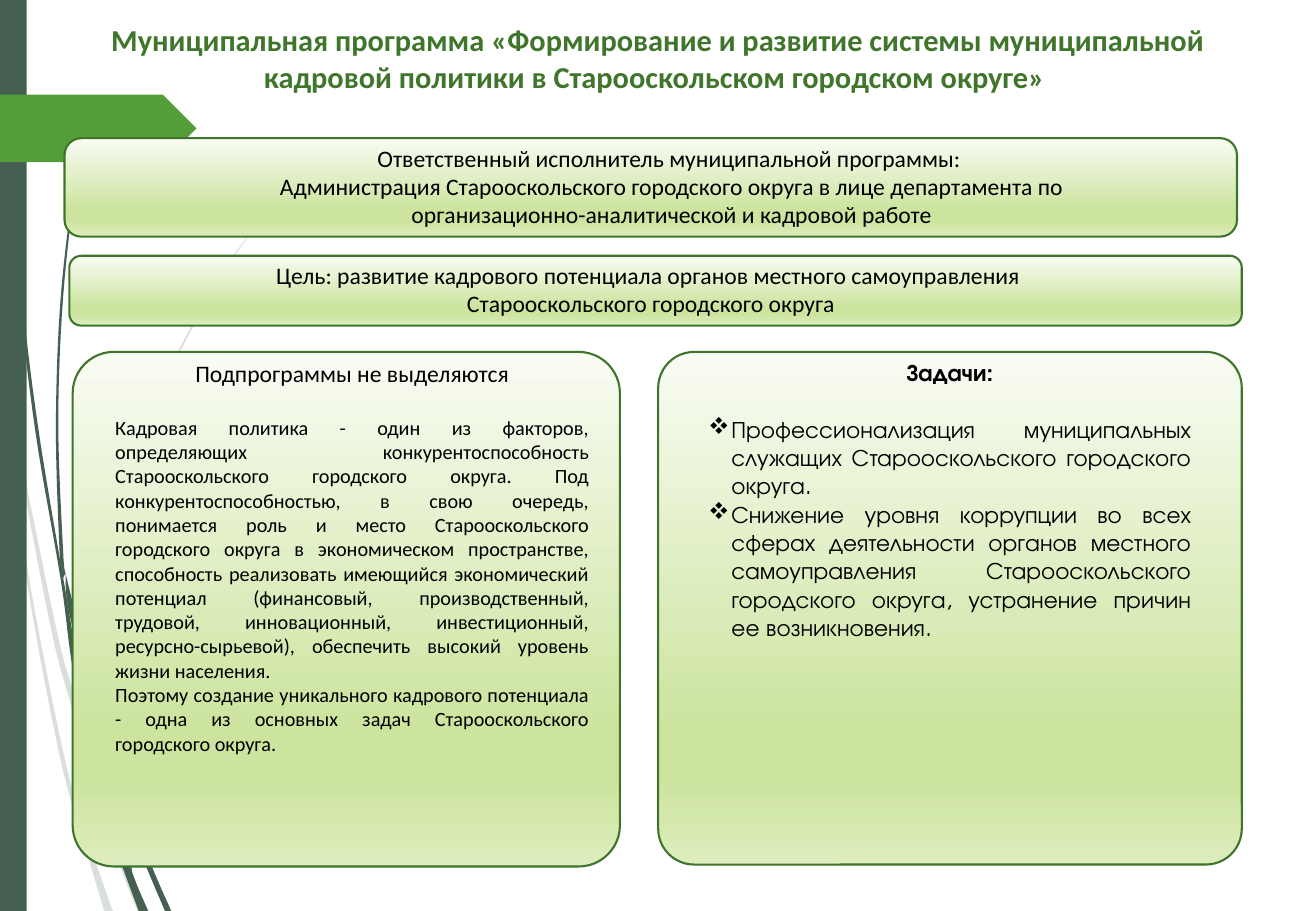
import pptx
import pptx.dml.color
import pptx.enum.shapes
import pptx.enum.text
import pptx.oxml
import pptx.oxml.ns
import pptx.util
from lxml import etree

Cm = pptx.util.Cm
Pt = pptx.util.Pt
RGBColor = pptx.dml.color.RGBColor
Shapes = pptx.enum.shapes.MSO_SHAPE
Align = pptx.enum.text.PP_ALIGN
qn = pptx.oxml.ns.qn

DARK_GREEN = RGBColor(0x45, 0x5F, 0x51)
ARROW_GREEN = RGBColor(0x54, 0x9E, 0x39)
TITLE_GREEN = RGBColor(0x3F, 0x76, 0x2B)
BORDER_GREEN = RGBColor(0x3E, 0x75, 0x2A)
BLACK = RGBColor(0, 0, 0)
PANEL_STOPS = [
    (0, RGBColor(0xF9, 0xFC, 0xF4)),
    (74, RGBColor(0xCC, 0xE4, 0x9E)),
    (83, RGBColor(0xCC, 0xE4, 0x9E)),
    (100, RGBColor(0xDD, 0xED, 0xBE)),
]


def smooth(points, steps=8):
    """Return points on a Catmull-Rom curve through the given points."""
    padded = [points[0], *points, points[-1]]
    curve = []
    for before, start, end, after in zip(padded, padded[1:], padded[2:], padded[3:]):
        for step in range(steps):
            t = step / steps
            curve.append(tuple(
                b + 0.5 * t * (c - a + t * (2 * a - 5 * b + 4 * c - d + t * (3 * (b - c) + d - a)))
                for a, b, c, d in zip(before, start, end, after)))
    return curve + [points[-1]]


def paint(shape, color):
    """Give a shape a plain fill without line or shadow."""
    shape.shadow.inherit = False
    shape.fill.solid()
    shape.fill.fore_color.rgb = color
    shape.line.fill.background()


presentation = pptx.Presentation()
presentation.slide_width = Cm(27.51)
presentation.slide_height = Cm(19.05)
slide = presentation.slides.add_slide(presentation.slide_layouts[6])

# Grass blades: opacity in percent, left edge, right edge (cm)
blades = [
    (20, [(0.2, 8.89), (0.53, 11.94), (1.24, 15.77), (1.75, 17.6), (2.18, 19.05)],
     [(0.33, 9.55), (0.58, 11.91), (1.32, 15.72), (1.78, 17.35), (2.01, 18.06), (2.36, 19.05)]),
    (20, [(0, 7.16), (0.28, 9.02), (1.09, 13.26), (1.6, 15.21), (1.65, 16.41), (2.01, 18.06)],
     [(0, 7.16), (0.28, 8.76), (1.19, 13.21), (1.63, 14.88), (1.73, 16.41), (2.01, 18.06)]),
    (20, [(1.68, 15.49), (2.34, 17.63), (2.87, 19.05)],
     [(1.68, 15.14), (2.44, 17.58), (2.97, 19.05)]),
    (20, [(5.97, 3.89), (5.13, 5), (4.34, 6.2), (3.02, 8.84), (2.06, 11.71), (1.63, 14.83), (1.68, 15.14)],
     [(5.97, 3.91), (5.13, 5.03), (4.37, 6.22), (3.05, 8.86), (2.11, 11.73), (1.68, 14.83), (1.68, 15.14)]),
    (100, [(0.05, 0), (0.15, 2.79), (0.38, 5.92), (0.74, 9.02), (1.27, 12.12), (1.55, 14.15),
           (2.11, 16.74), (2.51, 17.98), (2.9, 19.05)],
     [(0.08, 0), (0.18, 2.77), (0.43, 5.89), (0.81, 9.02), (1.45, 12.83), (1.65, 14.12),
      (2.24, 16.69), (2.77, 18.26), (3.1, 19.05)]),
    (100, [(1.37, 11.99), (1.45, 12.83), (2.01, 15.04), (2.41, 16.38), (2.51, 17.55), (2.77, 18.26)],
     [(1.37, 11.99), (2.11, 14.99), (2.41, 16.03), (2.51, 16.66), (2.77, 18.26)]),
    (100, [(2.51, 16.66), (3, 17.98), (3.45, 19.05)],
     [(2.51, 16.28), (3.1, 17.93), (3.58, 19.05)]),
    (100, [(1.57, 3.58), (1.27, 6.22), (1.17, 8.86), (1.24, 11.4), (1.3, 12.12)],
     [(1.6, 3.58), (1.32, 6.22), (1.22, 8.86), (1.32, 11.51), (1.37, 11.99)]),
]
for opacity, left_edge, right_edge in blades:
    outline = [(Cm(x), Cm(y)) for x, y in smooth(left_edge) + smooth(right_edge)[::-1]]
    builder = slide.shapes.build_freeform(*outline[0])
    builder.add_line_segments(outline[1:], close=True)
    blade = builder.convert_to_shape()
    paint(blade, DARK_GREEN)
    if opacity < 100:
        color_element = blade._element.spPr.find(qn("a:solidFill"))[0]
        etree.SubElement(color_element, qn("a:alpha"), val=str(opacity * 1000))

side_bar = slide.shapes.add_shape(Shapes.RECTANGLE, 0, 0, Cm(0.56), Cm(19.05))
paint(side_bar, DARK_GREEN)
arrow = slide.shapes.add_shape(Shapes.PENTAGON, 0, Cm(1.98), Cm(4.11), Cm(1.41))
paint(arrow, ARROW_GREEN)

# Panels: left, top, width, height (cm), corner radius
panels = [
    (1.35, 2.89, 24.51, 2.06, 0.17),
    (1.45, 5.35, 24.51, 1.46, 0.17),
    (1.52, 7.36, 11.44, 10.76, 0.08),
    (13.76, 7.36, 12.2, 10.72, 0.07),
]
for *box, radius in panels:
    panel = slide.shapes.add_shape(Shapes.ROUNDED_RECTANGLE, *map(Cm, box))
    panel.shadow.inherit = False
    panel.adjustments[0] = radius
    panel.line.color.rgb = BORDER_GREEN
    panel.line.width = Pt(1.25)
    panel.fill.gradient()
    panel.fill.gradient_angle = 270
    stop_list = panel._element.spPr.find(qn("a:gradFill")).find(qn("a:gsLst"))
    for old_stop in list(stop_list):
        stop_list.remove(old_stop)
    for position, color in PANEL_STOPS:
        stop = etree.SubElement(stop_list, qn("a:gs"), pos=str(position * 1000))
        etree.SubElement(stop, qn("a:srgbClr"), val=str(color))

title_font = {"name": "Calibri", "size": Pt(18), "bold": True}
lead_font = {"name": "Calibri", "size": Pt(14), "bold": False}
body_font = {**lead_font, "size": Pt(12)}
task_font = {**lead_font, "name": "TeX Gyre Adventor"}
task_heading_font = {**task_font, "bold": True}
centered = {"alignment": Align.CENTER}
justified = {"alignment": Align.JUSTIFY}
after_heading = {**justified, "space_before": Pt(16.5)}

# Texts: box (cm), colour, paragraphs as (text, font, paragraph format, bulleted)
texts = [
    ((1.55, 0.32, 24.41, 1.8), TITLE_GREEN, [
        ("Муниципальная программа «Формирование и развитие системы муниципальной "
         "кадровой политики в Старооскольском городском округе» ", title_font, centered, False),
    ]),
    ((4.75, 2.88, 18.59, 2.06), BLACK, [
        ("Ответственный исполнитель муниципальной программы: ", lead_font, centered, False),
        ("Администрация Старооскольского городского округа в лице департамента по "
         "организационно-аналитической и кадровой работе", lead_font, centered, False),
    ]),
    ((0.91, 5.33, 25.4, 1.45), BLACK, [
        ("Цель: развитие кадрового потенциала органов местного самоуправления ",
         lead_font, centered, False),
        ("Старооскольского городского округа", lead_font, centered, False),
    ]),
    ((2.16, 7.38, 10.41, 9.25), BLACK, [
        ("Подпрограммы не выделяются", lead_font, centered, False),
        ("Кадровая политика - один из факторов, определяющих конкурентоспособность "
         "Старооскольского городского округа. Под конкурентоспособностью, в свою очередь, "
         "понимается роль и место Старооскольского городского округа в экономическом "
         "пространстве, способность реализовать имеющийся экономический потенциал "
         "(финансовый, производственный, трудовой, инновационный, инвестиционный, "
         "ресурсно-сырьевой), обеспечить высокий уровень жизни населения.",
         body_font, after_heading, False),
        ("Поэтому создание уникального кадрового потенциала - одна из основных задач "
         "Старооскольского городского округа.", body_font, justified, False),
    ]),
    ((14.56, 7.37, 10.59, 6.25), BLACK, [
        ("Задачи:", task_heading_font, centered, False),
        ("Профессионализация муниципальных служащих Старооскольского городского округа.",
         task_font, after_heading, True),
        ("Снижение уровня коррупции во всех сферах деятельности органов местного "
         "самоуправления Старооскольского городского округа, устранение причин ее "
         "возникновения.", task_font, justified, True),
    ]),
]
for box, color, paragraphs in texts:
    text_frame = slide.shapes.add_textbox(*map(Cm, box)).text_frame
    text_frame.word_wrap = True
    for index, (text, font_format, paragraph_format, bulleted) in enumerate(paragraphs):
        paragraph = text_frame.add_paragraph() if index else text_frame.paragraphs[0]
        for name, value in paragraph_format.items():
            setattr(paragraph, name, value)
        if bulleted:
            properties = paragraph._p.get_or_add_pPr()
            properties.set("marL", str(Cm(0.48)))
            properties.set("indent", str(-Cm(0.48)))
            # Wingdings draws the letter v as ❖
            etree.SubElement(properties, qn("a:buFont"), typeface="Wingdings", charset="2")
            etree.SubElement(properties, qn("a:buChar"), char="v")
        run = paragraph.add_run()
        run.text = text
        for name, value in font_format.items():
            setattr(run.font, name, value)
        run.font.color.rgb = color

presentation.save("out.pptx")
